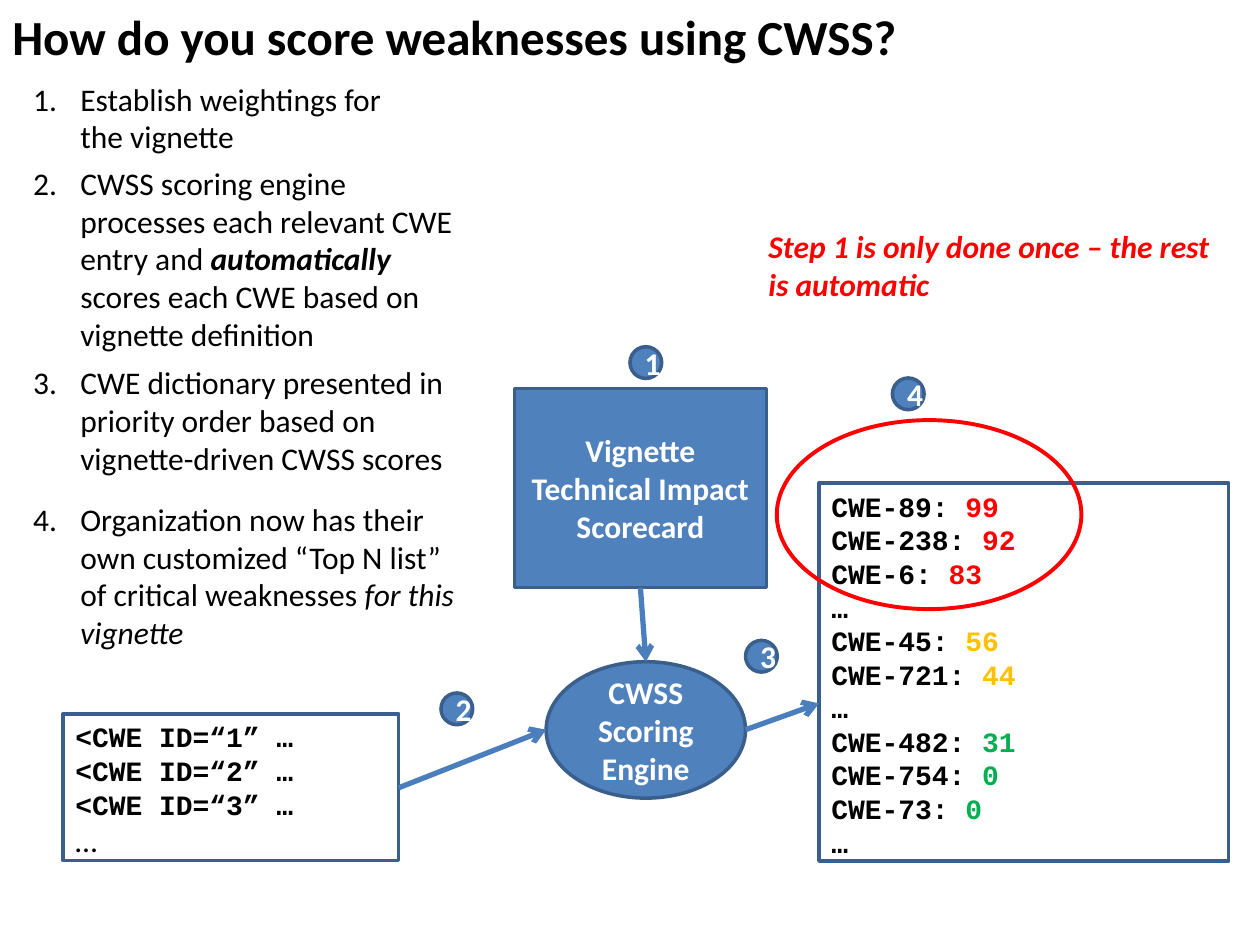
"""Build the slide on scoring weaknesses with CWSS."""
import pptx
import pptx.dml.color
import pptx.enum.shapes
import pptx.enum.text
import pptx.oxml.ns
import pptx.util
from lxml import etree

Cm, Pt = pptx.util.Cm, pptx.util.Pt
RGBColor = pptx.dml.color.RGBColor
MSO = pptx.enum.shapes.MSO_SHAPE
ANCHOR = pptx.enum.text.MSO_ANCHOR
ALIGN = pptx.enum.text.PP_ALIGN
qn = pptx.oxml.ns.qn

BLUE = RGBColor(0x4F, 0x81, 0xBD)
EDGE = RGBColor(0x3A, 0x5F, 0x8C)
ARROW = RGBColor(0x4B, 0x7E, 0xBC)
BLACK = RGBColor(0, 0, 0)
WHITE = RGBColor(0xFF, 0xFF, 0xFF)
RED = RGBColor(0xFF, 0, 0)
AMBER = RGBColor(0xFF, 0xC0, 0)
GREEN = RGBColor(0, 0xB0, 0x50)

BODY = {"name": "Calibri", "size": Pt(18), "color": BLACK}
LABEL = {**BODY, "color": WHITE, "bold": True}
CODE = {**BODY, "name": "Courier New", "size": Pt(16), "bold": True}
NOTE = {**BODY, "color": RED, "bold": True, "italic": True}
TITLE = {**BODY, "size": Pt(28), "bold": True}


def write(tf, paragraphs, align=ALIGN.LEFT):
    tf.word_wrap = True
    for i, runs in enumerate(paragraphs):
        p = tf.paragraphs[0] if i == 0 else tf.add_paragraph()
        p.alignment = align
        for text, fmt in runs:
            r = p.add_run()
            r.text = text
            for key, value in fmt.items():
                if key == "color":
                    r.font.color.rgb = value
                else:
                    setattr(r.font, key, value)


def add_box(kind, box, fill=None, line=EDGE, width=2):
    sp = s.shapes.add_shape(kind, *map(Cm, box))
    sp.shadow.inherit = False
    if fill is None:
        sp.fill.background()
    else:
        sp.fill.solid()
        sp.fill.fore_color.rgb = fill
    sp.line.color.rgb = line
    sp.line.width = Pt(width)
    return sp


prs = pptx.Presentation()
prs.slide_width, prs.slide_height = Cm(25.4), Cm(19.05)
s = prs.slides.add_slide(prs.slide_layouts[6])

labels = [
    (MSO.RECTANGLE, (10.37, 7.83, 5.08, 4.02), ["Vignette", "Technical Impact Scorecard"]),
    (MSO.OVAL, (11.01, 13.34, 4.02, 2.75), ["CWSS Scoring Engine"]),
]
badges = [(12.7, 6.99), (8.89, 13.97), (15.03, 12.91), (17.99, 7.62)]
for number, (x, y) in enumerate(badges, 1):
    labels.append((MSO.OVAL, (x, y, 0.64, 0.64), [str(number)]))
for kind, box, lines in labels:
    sp = add_box(kind, box, fill=BLUE)
    sp.text_frame.vertical_anchor = ANCHOR.MIDDLE
    write(sp.text_frame, [[(text, LABEL)] for text in lines], ALIGN.CENTER)

entries = [[(f"<CWE ID=“{n}” …", CODE)] for n in (1, 2, 3)] + [[("…", BODY)]]
groups = [
    (RED, [(89, 99), (238, 92), (6, 83)]),
    (AMBER, [(45, 56), (721, 44)]),
    (GREEN, [(482, 31), (754, 0), (73, 0)]),
]
scores = []
for color, pairs in groups:
    for cwe, score in pairs:
        scores.append([(f"CWE-{cwe}: ", CODE), (str(score), {**CODE, "color": color})])
    scores.append([("…", CODE)])
for box, paragraphs in [
    ((1.27, 14.39, 6.77, 2.96), entries),
    ((16.51, 9.74, 8.26, 7.62), scores),
]:
    sp = add_box(MSO.RECTANGLE, box)
    sp.text_frame.vertical_anchor = ANCHOR.TOP
    write(sp.text_frame, paragraphs)

for ends in [
    (8.04, 15.88, 11.01, 14.71),
    (12.91, 11.85, 13.02, 13.34),
    (15.03, 14.71, 16.51, 14.18),
]:
    c = s.shapes.add_connector(pptx.enum.shapes.MSO_CONNECTOR.STRAIGHT, *map(Cm, ends))
    c.line.color.rgb = ARROW
    c.line.width = Pt(3)
    etree.SubElement(c.line._get_or_add_ln(), qn("a:tailEnd"), type="arrow")
    etree.SubElement(c._element.spPr, qn("a:effectLst"))

add_box(MSO.OVAL, (15.66, 8.47, 6.14, 3.81), line=RED, width=2.25)

steps = [
    ((0.42, 1.48, 8.47, 1.79), [("Establish weightings for the vignette", BODY)]),
    ((0.42, 3.18, 9.1, 4.11), [
        ("CWSS scoring engine processes each relevant CWE entry and ", BODY),
        ("automatically", {**BODY, "bold": True, "italic": True}),
        (" scores each CWE based on vignette definition", BODY),
    ]),
    ((0.42, 7.2, 9.1, 2.57), [
        ("CWE dictionary presented in priority order based on vignette-driven CWSS scores", BODY),
    ]),
    ((0.42, 9.95, 9.1, 3.33), [
        ("Organization now has their own customized “Top N list” of critical weaknesses ", BODY),
        ("for this vignette", {**BODY, "italic": True}),
    ]),
]
texts = [
    ((0, 0, 19.26, 1.45), [("How do you score weaknesses using CWSS?", TITLE)]),
    ((15.24, 4.45, 9.53, 1.79), [("Step 1 is only done once – the rest is automatic", NOTE)]),
]
for number, (box, runs) in enumerate(texts + steps, 1 - len(texts)):
    tf = s.shapes.add_textbox(*map(Cm, box)).text_frame
    write(tf, [runs])
    tf.auto_size = pptx.enum.text.MSO_AUTO_SIZE.SHAPE_TO_FIT_TEXT
    if number > 0:
        p = tf.paragraphs[0]
        p.space_after = Pt(0 if number == 1 else 6)
        pPr = p._p.get_or_add_pPr()
        pPr.set("marL", str(Cm(0.95)))
        pPr.set("indent", str(-Cm(0.95)))
        etree.SubElement(pPr, qn("a:buFont"), typeface="+mj-lt")
        etree.SubElement(pPr, qn("a:buAutoNum"), type="arabicPeriod", startAt=str(number))

prs.save("out.pptx")
